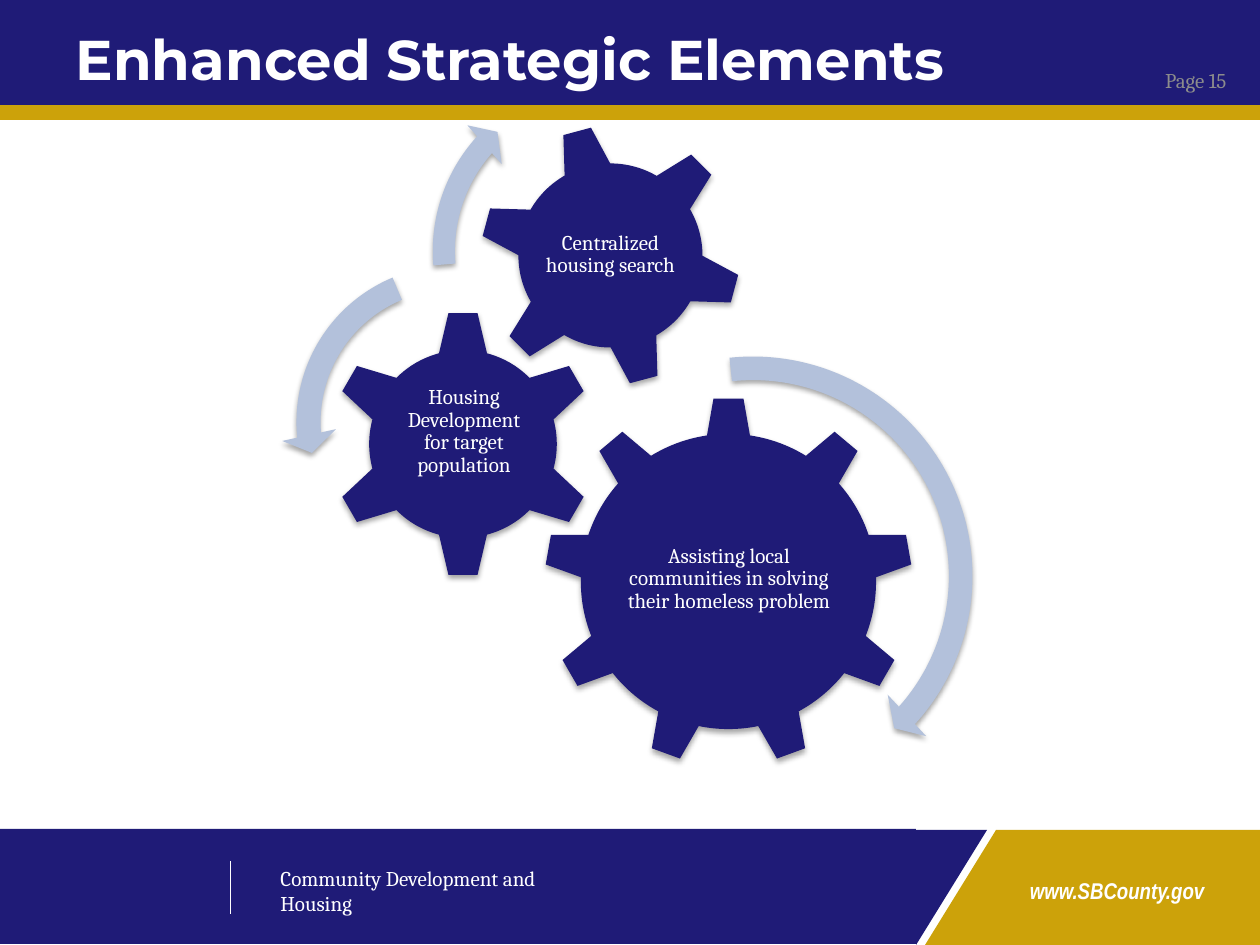
from lxml import etree
from pptx import Presentation
from pptx.dml.color import RGBColor
from pptx.enum.shapes import MSO_CONNECTOR, MSO_SHAPE
from pptx.enum.text import MSO_ANCHOR, MSO_AUTO_SIZE, PP_ALIGN
from pptx.oxml import parse_xml
from pptx.oxml.ns import nsdecls, qn
from pptx.util import Emu, Pt

RECTANGLE = MSO_SHAPE.RECTANGLE
TRIANGLE = MSO_SHAPE.RIGHT_TRIANGLE
GEAR_6 = MSO_SHAPE.GEAR_6
GEAR_9 = MSO_SHAPE.GEAR_9
ARROW = MSO_SHAPE.CIRCULAR_ARROW
LEFT_ARROW = MSO_SHAPE.LEFT_CIRCULAR_ARROW
STRAIGHT = MSO_CONNECTOR.STRAIGHT
LEFT, CENTER, RIGHT = PP_ALIGN.LEFT, PP_ALIGN.CENTER, PP_ALIGN.RIGHT
TOP, MIDDLE = MSO_ANCHOR.TOP, MSO_ANCHOR.MIDDLE
NO_AUTOFIT = MSO_AUTO_SIZE.NONE

EMU_PER_PX = 914400 / 126
NAVY, GOLD, PALE_BLUE = "1F1B77", "CCA20A", "B3C1DB"
WHITE, GREY = "FFFFFF", "8C8C8C"
BODY_FONT = "Cambria"

BANDS = [
    (RECTANGLE, (0, 100, 1261, 20), GOLD, 0),
    (RECTANGLE, (0, 0, 1261, 105), NAVY, 0),
    (RECTANGLE, (996, 830, 264, 115), GOLD, 0),
    (TRIANGLE, (903, 852, 115, 71), GOLD, 270),
    (RECTANGLE, (-1, 829, 917, 115), NAVY, 0),
    (TRIANGLE, (894, 852, 115, 71), NAVY, 90),
]
GEARS = [
    (GEAR_9, (544, 397, 369), 0, (619, 484, 220, 190), 2,
     "Assisting local communities in solving their homeless problem"),
    (GEAR_6, (329, 310, 268), 0, (397, 378, 134, 132), 27,
     "Housing Development for target population"),
    (GEAR_6, (479, 124, 263), 345, (537, 181, 147, 147), 2,
     "Centralized housing search"),
]
ARROWS = [
    (ARROW, (517, 340, 472), (0.05, 2.99, 25.3, 158.31, 0.06)),
    (LEFT_ARROW, (281, 250, 344), (0.07, 4.3, 104.89, 148.38, 0.08)),
    (ARROW, (418, 66, 370), (0.06, 3.94, 133.14, 105.08, 0.07)),
]


def px(length):
    return Emu(round(length * EMU_PER_PX))


def rgb(color):
    return RGBColor.from_string(color)


def add_solid(slide, preset, box, color, rotation=0):
    solid = slide.shapes.add_shape(preset, *map(px, box))
    solid.shadow.inherit = False
    solid.fill.solid()
    solid.fill.fore_color.rgb = rgb(color)
    solid.line.fill.background()
    solid.rotation = rotation
    return solid


def add_soft_shadow(solid):
    effects = solid.element.spPr.find(qn("a:effectLst"))
    effects.append(parse_xml(
        f'<a:outerShdw {nsdecls("a")} blurRad="{Pt(3.1)}" dist="{Pt(1.8)}" '
        'dir="5400000" rotWithShape="0"><a:srgbClr val="000000">'
        '<a:alpha val="35000"/></a:srgbClr></a:outerShdw>'))


def write_text(frame, text, size, font_name, color, align=LEFT,
               anchor=TOP, bold=False, italic=False):
    frame.word_wrap = True
    frame.auto_size = NO_AUTOFIT
    frame.vertical_anchor = anchor
    paragraph = frame.paragraphs[0]
    paragraph.alignment = align
    run = paragraph.add_run()
    run.text = text
    run.font.size = Pt(size)
    run.font.name = font_name
    run.font.bold = bold
    run.font.italic = italic
    run.font.color.rgb = rgb(color)
    return paragraph


def add_label(slide, box, text, size, font_name, color, **style):
    frame = slide.shapes.add_textbox(*map(px, box)).text_frame
    write_text(frame, text, size, font_name, color, **style)
    return frame


def add_divider(slide, x, top, bottom):
    divider = slide.shapes.add_connector(
        STRAIGHT, px(x), px(top), px(x), px(bottom))
    divider.line.color.rgb = rgb(WHITE)
    divider.line.width = Pt(0.25)
    etree.SubElement(divider.element.spPr, qn("a:effectLst"))


def place_title(slide, box, text):
    title = slide.shapes.title
    title.element.getparent().append(title.element)
    title.left, title.top, title.width, title.height = map(px, box)
    write_text(title.text_frame, text, 32, "Montserrat", WHITE,
               anchor=MIDDLE, bold=True)


def add_gear(slide, preset, place, rotation, label_box, bottom_inset, text):
    left, top, side = place
    gear = add_solid(slide, preset, (left, top, side, side), NAVY, rotation)
    add_soft_shadow(gear)
    frame = add_label(slide, label_box, text, 12, BODY_FONT, WHITE,
                      align=CENTER, anchor=MIDDLE)
    frame.margin_left = frame.margin_right = frame.margin_top = px(2)
    frame.margin_bottom = px(bottom_inset)
    frame.paragraphs[0].line_spacing = 0.9


def add_turn_arrow(slide, preset, place, adjustments):
    left, top, side = place
    arrow = add_solid(slide, preset, (left, top, side, side), PALE_BLUE)
    for index, value in enumerate(adjustments):
        arrow.adjustments[index] = value
    add_soft_shadow(arrow)


def main():
    deck = Presentation()
    deck.slide_width, deck.slide_height = px(1260), px(945)
    slide = deck.slides.add_slide(deck.slide_layouts[5])

    for band in BANDS:
        add_solid(slide, *band)
    add_divider(slide, 230, 861, 914)
    add_label(slide, (975, 871, 284, 40), "www.SBCounty.gov", 13,
              "Arial Narrow", WHITE, align=CENTER, bold=True, italic=True)
    add_label(slide, (1092, 55, 147, 50), "Page 15", 12, BODY_FONT, GREY,
              align=RIGHT, anchor=MIDDLE)
    add_label(slide, (268, 859, 349, 38), "Community Development and Housing",
              12, BODY_FONT, WHITE)
    place_title(slide, (63, -21, 1134, 158), "Enhanced Strategic Elements")

    for gear in GEARS:
        add_gear(slide, *gear)
    for arrow in ARROWS:
        add_turn_arrow(slide, *arrow)
    deck.save("out.pptx")


if __name__ == "__main__":
    main()
